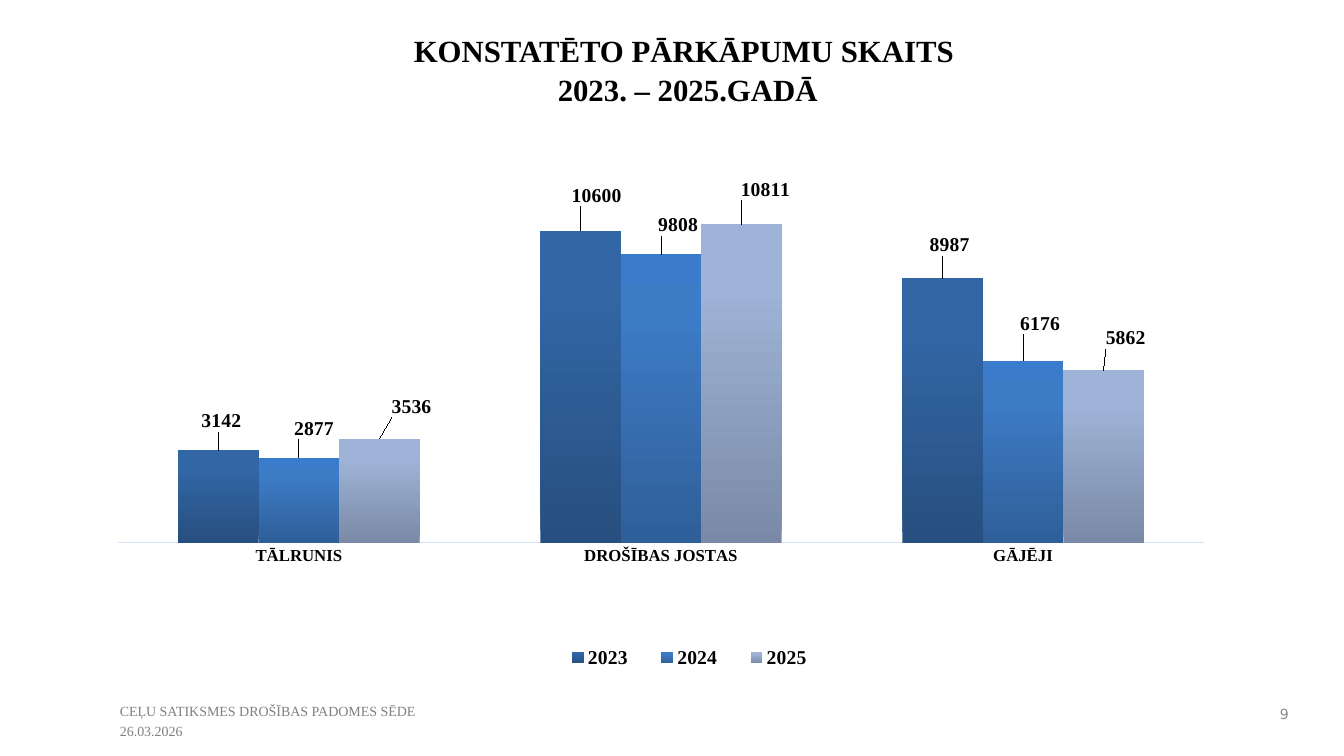
from dataclasses import dataclass

from lxml.etree import SubElement
from pptx import Presentation
from pptx.chart.data import CategoryChartData
from pptx.dml.color import RGBColor
from pptx.enum.chart import XL_CHART_TYPE as ChartType, XL_LABEL_POSITION as LabelPos
from pptx.enum.chart import XL_LEGEND_POSITION as LegendPos, XL_TICK_MARK as Tick
from pptx.enum.text import MSO_ANCHOR as Anchor, PP_ALIGN as Align
from pptx.oxml import parse_xml
from pptx.oxml.ns import nsdecls, qn
from pptx.util import Inches, Pt


@dataclass(frozen=True)
class Theme:
    serif: str = "Times New Roman"
    sans: str = "DejaVu Sans"
    ink: str = "000000"
    footer: str = "808080"
    number: str = "898989"
    axis: str = "D4E3F4"
    title_size: int = 22
    label_size: int = 14
    category_size: int = 12
    small_size: int = 10


# Year: values, gradient from foot to top, label shift right and up in inches
YEARS = {
    "2023": ((3142, 10600, 8987), ("274F7F", "3266A5", "3067A8"),
             ((0.03, 0.14), (0.16, 0.2), (0.07, 0.18))),
    "2024": ((2877, 9808, 6176), ("2F5F99", "3D7CC7", "3A7CCB"),
             ((0.15, 0.14), (0.17, 0.14), (0.17, 0.22))),
    "2025": ((3536, 10811, 5862), ("7A8AA6", "9EB3D7", "9EB3D9"),
             ((0.32, 0.17), (0.24, 0.2), (0.22, 0.17))),
}
VIOLATIONS = ("TĀLRUNIS", "DROŠĪBAS JOSTAS", "GĀJĒJI")
CHART_BOX = (0.94, 1.65, 11.45, 5.13)


def manual_layout(**settings):
    layout = parse_xml(f"<c:layout {nsdecls('c')}/>")
    manual = SubElement(layout, qn("c:manualLayout"))
    for key, value in settings.items():
        SubElement(manual, qn(f"c:{key}")).set("val", str(value))
    return layout


def fill_gradient(series, colors):
    """Fill the bars with three stops, running upwards."""
    series.format.fill.gradient()
    gradient = series._element.find(f".//{qn('a:gradFill')}")
    stops = "".join(f'<a:gs pos="{pos * 1000}"><a:srgbClr val="{color}"/></a:gs>'
                    for pos, color in zip((0, 80, 100), colors))
    gradient.getparent().replace(gradient, parse_xml(
        f'<a:gradFill {nsdecls("a")} rotWithShape="1"><a:gsLst>{stops}</a:gsLst>'
        '<a:lin ang="16200000" scaled="0"/></a:gradFill>'))


class SlideBuilder:
    def __init__(self, deck, theme):
        self.theme = theme
        self.slide = deck.slides.add_slide(deck.slide_layouts[5])

    def style(self, font, size, color=None, bold=False, face=None):
        font.name = face or self.theme.serif
        font.size = Pt(size)
        font.bold = bold
        font.color.rgb = RGBColor.from_string(color or self.theme.ink)

    def title(self, wording, box):
        heading = self.slide.shapes.title
        heading.left, heading.top, heading.width, heading.height = map(Inches, box)
        frame = heading.text_frame
        frame.text = wording
        frame.word_wrap = True
        frame.vertical_anchor = Anchor.TOP
        paragraph = frame.paragraphs[0]
        paragraph.alignment = Align.CENTER
        paragraph.line_spacing = 1.05
        for run in paragraph.runs:
            self.style(run.font, self.theme.title_size, bold=True)

    def text(self, wording, box, color, face=None, align=Align.LEFT, anchor=Anchor.TOP):
        frame = self.slide.shapes.add_textbox(*map(Inches, box)).text_frame
        frame.text = wording
        frame.word_wrap = True
        frame.vertical_anchor = anchor
        for index, paragraph in enumerate(frame.paragraphs):
            paragraph.alignment = align
            if index:
                paragraph.space_before = Pt(2)
            for run in paragraph.runs:
                self.style(run.font, self.theme.small_size, color, face=face)

    def column_chart(self, categories, years, box):
        data = CategoryChartData()
        data.categories = categories
        for year, (counts, _, _) in years.items():
            data.add_series(year, counts)
        chart = self.slide.shapes.add_chart(
            ChartType.COLUMN_CLUSTERED, *map(Inches, box), data).chart
        self.style(chart.font, self.theme.small_size)
        chart.has_title = False
        self.axes(chart)
        self.legend(chart)

        plot = chart.plots[0]
        plot.gap_width = 150
        plot.overlap = 0
        plot.vary_by_categories = False
        for series, (_, colors, shifts) in zip(plot.series, years.values()):
            fill_gradient(series, colors)
            self.value_labels(series, shifts, box)

        area = chart._chartSpace.chart.plotArea
        for layout in area.findall(qn("c:layout")):
            area.remove(layout)
        area.insert(0, manual_layout(layoutTarget="inner", xMode="edge", yMode="edge",
                                     x=0.02, y=0.045, w=0.941, h=0.683))

    def axes(self, chart):
        violations, counts = chart.category_axis, chart.value_axis
        violations.major_tick_mark = Tick.NONE
        violations.format.line.color.rgb = RGBColor.from_string(self.theme.axis)
        violations.format.line.width = Pt(0.75)
        self.style(violations.tick_labels.font, self.theme.category_size, bold=True)
        counts.minimum_scale, counts.maximum_scale = 0, 12000
        counts.has_major_gridlines = False
        counts.visible = False

    def legend(self, chart):
        chart.has_legend = True
        legend = chart.legend
        legend.position = LegendPos.BOTTOM
        legend.include_in_layout = False
        self.style(legend.font, self.theme.label_size, bold=True)
        legend._element.find(qn("c:legendPos")).addnext(manual_layout(
            xMode="edge", yMode="edge", x=0.39, y=0.92, w=0.25, h=0.06))

    def value_labels(self, series, shifts, box):
        labels = series.data_labels
        labels.show_value = True
        labels.position = LabelPos.OUTSIDE_END
        self.style(labels.font, self.theme.label_size, bold=True)
        for index in range(len(shifts)):
            label = series.points[index].data_label
            self.style(label.font, self.theme.label_size, bold=True)
            label.position = LabelPos.OUTSIDE_END
        _, _, width, height = box
        for label, (right, up) in zip(series._element.iter(qn("c:dLbl")), shifts):
            label.find(qn("c:idx")).addnext(
                manual_layout(x=round(right / width, 4), y=round(-up / height, 4)))


def main():
    deck = Presentation()
    deck.slide_width, deck.slide_height = Inches(13.33), Inches(7.5)
    theme = Theme()
    builder = SlideBuilder(deck, theme)
    builder.title("KONSTATĒTO PĀRKĀPUMU SKAITS \v2023. – 2025.GADĀ", (3.61, 0.25, 6.42, 1.27))
    builder.text("9", (12.44, 6.92, 0.44, 0.33), theme.number, theme.sans,
                 Align.RIGHT, Anchor.MIDDLE)
    builder.column_chart(VIOLATIONS, YEARS, CHART_BOX)
    builder.text("CEĻU SATIKSMES DROŠĪBAS PADOMES SĒDE\n26.03.2026",
                 (1.09, 6.92, 11.25, 0.26), theme.footer)
    deck.save("out.pptx")


if __name__ == "__main__":
    main()
